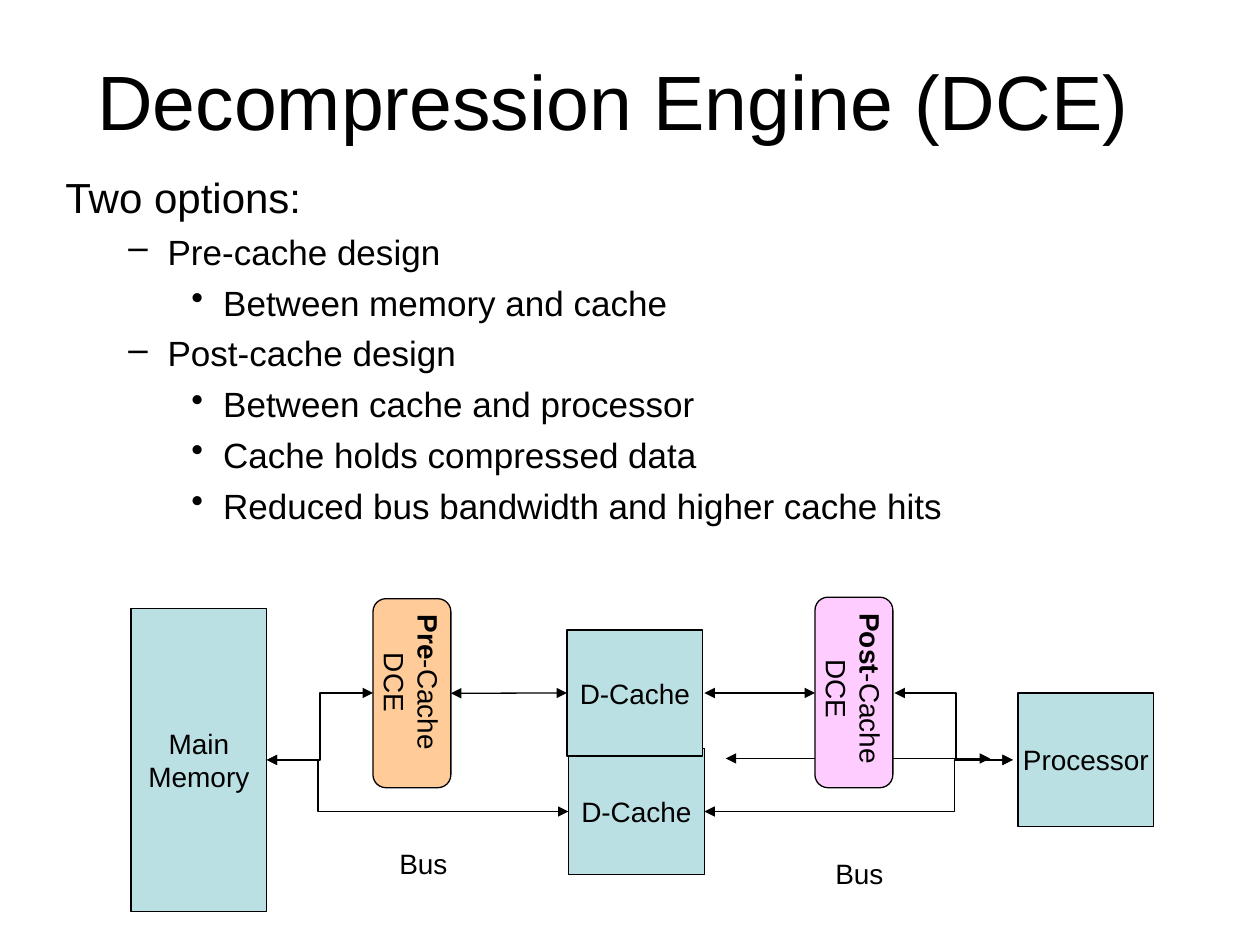
from lxml.etree import SubElement
from pptx import Presentation
from pptx.dml.color import RGBColor
from pptx.enum.shapes import MSO_CONNECTOR, MSO_SHAPE
from pptx.enum.text import MSO_ANCHOR, PP_ALIGN
from pptx.oxml.ns import qn
from pptx.util import Cm, Pt

BLACK = RGBColor(0x00, 0x00, 0x00)
TEAL = RGBColor(0xBB, 0xE0, 0xE3)
ORANGE = RGBColor(0xFF, 0xCC, 0x99)
PINK = RGBColor(0xFF, 0xCC, 0xFF)
RIGHT, LEFT = 3, 1
OUTLINE_LEVELS = [(24, 0, 0, None), (20, 2.06, -0.79, "–"), (20, 3.18, -0.64, "•")]


class DiagramSlide:
    """Holds the shared style and draws each kind of element on one slide."""

    def __init__(self, slide):
        self.slide = slide
        self.font = {"name": "Arial", "size": Pt(16)}

    def format(self, target, values):
        for name, value in values.items():
            setattr(target, name, value)

    def run(self, paragraph, text, **font):
        run = paragraph.add_run()
        run.text = text
        self.format(run.font, {**self.font, **font})
        run.font.color.rgb = BLACK

    def lines(self, frame, lines, alignment, **font):
        for index, line in enumerate(lines):
            paragraph = frame.add_paragraph() if index else frame.paragraphs[0]
            paragraph.alignment = alignment
            prefix, rest = line if isinstance(line, tuple) else ("", line)
            if prefix:
                self.run(paragraph, prefix, bold=True, **font)
            self.run(paragraph, rest, **font)

    def text_box(self, bounds, wrap=True, anchor=MSO_ANCHOR.TOP):
        frame = self.slide.shapes.add_textbox(*map(Cm, bounds)).text_frame
        self.format(frame, {"word_wrap": wrap, "vertical_anchor": anchor})
        return frame

    def title(self, bounds, text):
        frame = self.text_box(bounds, anchor=MSO_ANCHOR.MIDDLE)
        self.lines(frame, [text], PP_ALIGN.CENTER, size=Pt(44))

    def label(self, bounds, text):
        self.lines(self.text_box(bounds, wrap=False), [text], PP_ALIGN.LEFT)

    def outline(self, bounds, items):
        frame = self.text_box(bounds)
        for index, (level, text) in enumerate(items):
            size, margin, indent, bullet = OUTLINE_LEVELS[level]
            paragraph = frame.add_paragraph() if index else frame.paragraphs[0]
            self.format(paragraph, {"level": level, "space_before": Pt(5)})
            self.run(paragraph, text, size=Pt(size))
            if bullet:
                properties = paragraph._p.get_or_add_pPr()
                properties.set("marL", str(Cm(margin)))
                properties.set("indent", str(Cm(indent)))
                SubElement(properties, qn("a:buChar"), char=bullet)

    def block(self, bounds, lines, fill=TEAL, kind=MSO_SHAPE.RECTANGLE):
        shape = self.slide.shapes.add_shape(kind, *map(Cm, bounds))
        shape.shadow.inherit = False
        shape.fill.solid()
        shape.fill.fore_color.rgb = fill
        shape.line.color.rgb = BLACK
        shape.line.width = Pt(0.75)
        self.format(shape.text_frame, {"word_wrap": False, "vertical_anchor": MSO_ANCHOR.MIDDLE})
        self.lines(shape.text_frame, lines, PP_ALIGN.CENTER)
        return shape

    def engine(self, bounds, prefix, fill):
        lines = [(prefix, "-Cache"), "DCE"]
        shape = self.block(bounds, lines, fill, MSO_SHAPE.ROUNDED_RECTANGLE)
        shape.text_frame._txBody.bodyPr.set("vert", "eaVert")
        return shape

    def arrow(self, start, end, bend=None, width=0.75):
        kind = MSO_CONNECTOR.STRAIGHT if bend is None else MSO_CONNECTOR.ELBOW
        connector = self.slide.shapes.add_connector(kind, *map(Cm, start + end))
        connector.line.color.rgb = BLACK
        connector.line.width = Pt(width)
        line = connector.line._get_or_add_ln()
        for tip in ("a:headEnd", "a:tailEnd"):
            SubElement(line, qn(tip), type="triangle")
        properties = connector._element.spPr
        SubElement(properties, qn("a:effectLst"))
        if bend is not None:
            guides = properties.find(".//" + qn("a:avLst"))
            SubElement(guides, qn("a:gd"), name="adj1", fmla=f"val {round(bend * 100000)}")
        return connector


def main():
    presentation = Presentation()
    presentation.slide_width, presentation.slide_height = Cm(25.4), Cm(19.05)
    diagram = DiagramSlide(presentation.slides.add_slide(presentation.slide_layouts[6]))

    diagram.title((1.47, 0.43, 21.79, 3.18), "Decompression Engine (DCE)")
    diagram.outline((1.07, 3.33, 21.79, 13.26), [
        (0, "Two options:"),
        (1, "Pre-cache design"),
        (2, "Between memory and cache"),
        (1, "Post-cache design"),
        (2, "Between cache and processor"),
        (2, "Cache holds compressed data"),
        (2, "Reduced bus bandwidth and higher cache hits"),
    ])

    upper, middle, lower = 13.97, 15.32, 16.36
    memory_side, processor_side = (5.38, middle), (20.42, middle)

    diagram.block((2.64, 12.27, 2.74, 6.1), ["Main", "Memory"])
    pre_cache = diagram.engine((7.52, 12.07, 1.57, 3.81), "Pre", ORANGE)
    diagram.arrow(memory_side, (7.52, upper), bend=0.5)
    cache_link = diagram.arrow((9.09, upper), (11.43, upper))
    diagram.arrow(memory_side, (11.46, lower), bend=0.17)
    diagram.arrow((14.63, 15.29), (19.96, 15.29), width=1)

    diagram.block((11.46, 15.09, 2.74, 2.54), ["D-Cache"])
    upper_cache = diagram.block((11.43, 12.7, 2.74, 2.54), ["D-Cache"])
    cache_link.begin_connect(pre_cache, RIGHT)
    cache_link.end_connect(upper_cache, LEFT)
    diagram.block((20.52, 13.97, 2.74, 2.69), ["Processor"])
    diagram.engine((16.43, 12.04, 1.57, 3.84), "Post", PINK)

    diagram.arrow((14.2, lower), processor_side, bend=0.81)
    diagram.arrow((14.2, upper), (16.43, upper), bend=0.5)
    diagram.arrow((18.03, upper), processor_side, bend=0.52)

    for left, top in ((7.8, 16.94), (16.59, 17.15)):
        diagram.label((left, top, 1.47, 0.94), "Bus")

    presentation.save("out.pptx")


if __name__ == "__main__":
    main()
